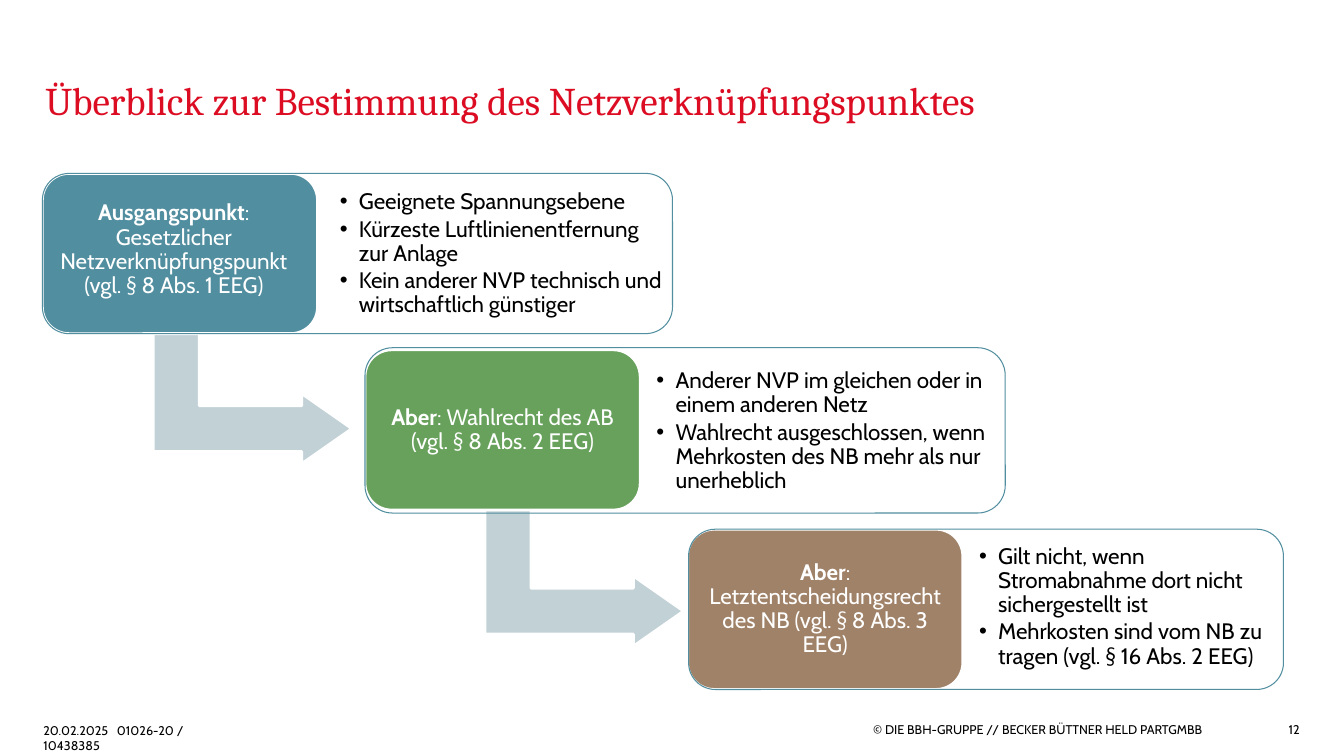
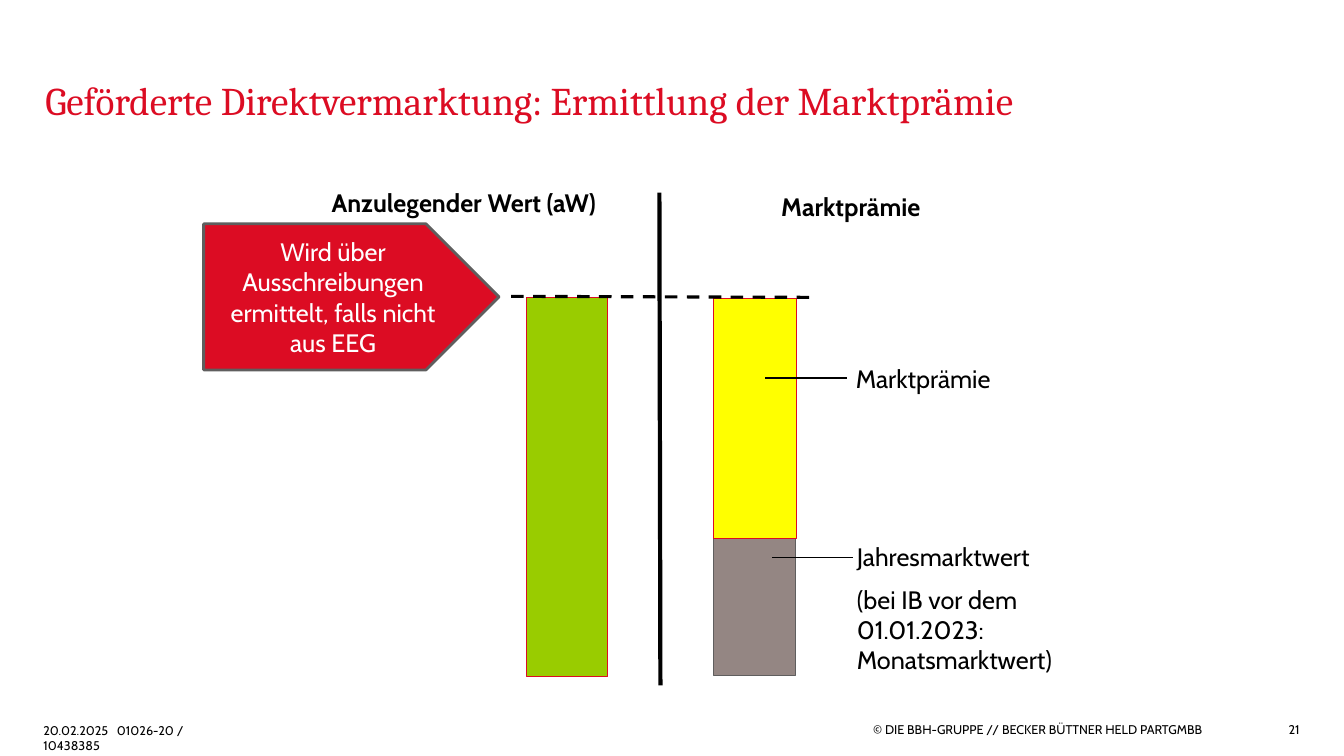
from lxml import etree
from pptx import Presentation
from pptx.dml.color import RGBColor
from pptx.enum.dml import MSO_LINE
from pptx.enum.shapes import MSO_CONNECTOR, MSO_SHAPE as Preset
from pptx.enum.text import MSO_ANCHOR as Anchor, PP_ALIGN as Align
from pptx.oxml.ns import qn
from pptx.util import Inches, Pt

COLORS = {
    "red": "DC0C23", "black": "000000", "white": "FFFFFF", "border": "5F5E5E",
    "teal": "518E9F", "green": "67A15C", "brown": "A08269", "arrow": "C2D1D6",
    "lime": "99CC00", "yellow": "FFFF00", "taupe": "948683",
}
DEFAULT_INSETS = (0.1, 0.05, 0.1, 0.05)
STEP_INSETS = (0.07, 0.07, 0.07, 0.07)


def color(name):
    return RGBColor.from_string(COLORS[name])


def write(frame, *paragraphs, size=18, font="Cabin", ink="black", bold=False,
          align=Align.LEFT, anchor=Anchor.TOP, insets=DEFAULT_INSETS,
          gap=0, spacing=None, bullet=None, tab=None):
    frame.word_wrap = True
    frame.vertical_anchor = anchor
    (frame.margin_left, frame.margin_top,
     frame.margin_right, frame.margin_bottom) = map(Inches, insets)
    for index, content in enumerate(paragraphs):
        paragraph = frame.add_paragraph() if index else frame.paragraphs[0]
        properties = paragraph._p.get_or_add_pPr()
        if bullet:
            properties.set("marL", str(Inches(0.19)))
            properties.set("indent", str(-Inches(0.19)))
            etree.SubElement(properties, qn("a:buFont"), typeface="Arial")
            etree.SubElement(properties, qn("a:buChar"), char=bullet)
        if tab:
            stops = etree.SubElement(properties, qn("a:tabLst"))
            etree.SubElement(stops, qn("a:tab"), pos=str(Inches(tab)), algn="l")
        paragraph.alignment = align
        if spacing:
            paragraph.line_spacing = spacing
        if index and gap:
            paragraph.space_before = Pt(gap)
        runs = [(content, bold)] if isinstance(content, str) else content
        for words, strong in runs:
            run = paragraph.add_run()
            run.text = words
            run.font.name, run.font.size, run.font.bold = font, Pt(size), strong
            run.font.color.rgb = color(ink)


class Deck:
    """Holds the shared style and the slide being built."""

    def __init__(self):
        self.presentation = Presentation()
        self.presentation.slide_width = Inches(13.33)
        self.presentation.slide_height = Inches(7.5)
        self.slide = None

    def new_slide(self, title, number):
        blank = self.presentation.slide_layouts[6]
        self.slide = self.presentation.slides.add_slide(blank)
        bare = (0, 0, 0, 0)
        self.text((0.45, 0.35, 11.38, 0.87), title, size=28, font="Cambria",
                  ink="red", anchor=Anchor.BOTTOM, insets=bare)
        self.text((0.43, 7.17, 1.72, 0.15), "20.02.2025\t01026-20 / 10438385",
                  size=9, insets=bare, tab=0.73)
        self.text((8.66, 7.08, 3.46, 0.31),
                  "© DIE BBH-GRUPPE // BECKER BÜTTNER HELD PARTGMBB",
                  size=9, anchor=Anchor.MIDDLE, insets=bare)
        self.text((12.42, 7.12, 0.47, 0.24), number, size=9, align=Align.RIGHT,
                  anchor=Anchor.MIDDLE, insets=bare)

    def text(self, box, *paragraphs, **style):
        holder = self.slide.shapes.add_textbox(*map(Inches, box))
        write(holder.text_frame, *paragraphs, **style)

    def shape(self, preset, box, fill=None, line="white", width=0.75):
        shape = self.slide.shapes.add_shape(preset, *map(Inches, box))
        shape.shadow.inherit = False
        if fill:
            shape.fill.solid()
            shape.fill.fore_color.rgb = color(fill)
        else:
            shape.fill.background()
        shape.line.color.rgb = color(line)
        shape.line.width = Pt(width)
        return shape

    def line(self, start, end, width=0.75, dash=None):
        line = self.slide.shapes.add_connector(
            MSO_CONNECTOR.STRAIGHT, *map(Inches, start + end))
        line.line.color.rgb = color("black")
        line.line.width = Pt(width)
        if dash:
            line.line.dash_style = dash
        etree.SubElement(line._element.spPr, qn("a:effectLst"))

    def bent_arrow(self, left, top):
        arrow = self.shape(Preset.BENT_UP_ARROW, (left, top, 1.39, 1.97),
                           "arrow", width=2)
        arrow.rotation = 90
        for index, value in enumerate((0.328, 0.25, 0.358)):
            arrow.adjustments[index] = value

    def step(self, frame, label_at, fill, heading, rest, points_box, points,
             insets=STEP_INSETS):
        label = self.shape(Preset.ROUNDED_RECTANGLE, label_at + (2.73, 1.59),
                           fill, width=2)
        write(label.text_frame, [(heading, True), (rest, False)], size=16,
              ink="white", align=Align.CENTER, anchor=Anchor.MIDDLE,
              insets=insets, spacing=0.9)
        self.text(points_box, *points, size=16, anchor=Anchor.MIDDLE,
                  insets=STEP_INSETS, spacing=0.9, gap=2.4, bullet="•")
        self.shape(Preset.ROUNDED_RECTANGLE, frame, line="teal")


def connection_point(deck):
    deck.new_slide("Überblick zur Bestimmung des Netzverknüpfungspunktes", "12")
    for corner in ((5.1, 4.73), (1.81, 2.92)):
        deck.bent_arrow(*corner)
    deck.step((0.42, 1.72, 6.25, 1.59), (0.42, 1.72), "teal", "Ausgangspunkt",
              ": Gesetzlicher Netzverknüpfungspunkt (vgl. § 8 Abs. 1 EEG)",
              (3.3, 1.81, 3.36, 1.42),
              ("Geeignete Spannungsebene",
               "Kürzeste Luftlinienentfernung zur Anlage",
               "Kein anderer NVP technisch und wirtschaftlich günstiger"),
              insets=(0.03, 0.07, 0.15, 0.14))
    deck.step((3.62, 3.45, 6.35, 1.64), (3.62, 3.47), "green", "Aber",
              ": Wahlrecht des AB (vgl. § 8 Abs. 2 EEG)",
              (6.44, 3.57, 3.61, 1.42),
              ("Anderer NVP im gleichen oder in einem anderen Netz",
               "Wahlrecht ausgeschlossen, wenn Mehrkosten des NB mehr als nur "
               "unerheblich"))
    deck.step((6.83, 5.25, 5.9, 1.59), (6.82, 5.25), "brown", "Aber",
              ": Letztentscheidungsrecht des NB (vgl. § 8 Abs. 3 EEG)",
              (9.64, 5.31, 3.2, 1.42),
              ("Gilt nicht, wenn Stromabnahme dort nicht sichergestellt ist",
               "Mehrkosten sind vom NB zu tragen (vgl. § 16 Abs. 2 EEG)"))


def market_premium(deck):
    deck.new_slide("Geförderte Direktvermarktung: Ermittlung der Marktprämie", "21")
    for box, fill, edge in (
            ((5.22, 2.95, 0.81, 3.76), "lime", "red"),
            ((7.08, 4.5, 0.81, 2.2), "taupe", "border"),
            ((7.08, 2.96, 0.82, 2.38), "yellow", "red")):
        deck.shape(Preset.RECTANGLE, box, fill, edge)
    deck.line((6.55, 6.8), (6.54, 1.91), 3)
    deck.line((7.66, 5.53), (8.46, 5.53))
    deck.line((7.59, 3.75), (8.4, 3.75))
    deck.line((5.07, 2.94), (8.06, 2.95), 2.25, MSO_LINE.DASH)
    deck.text((3.19, 1.81, 2.9, 0.4), "Anzulegender Wert (aW)", bold=True)
    deck.text((7.65, 1.85, 2.9, 0.4), "Marktprämie", bold=True)
    deck.text((8.39, 3.56, 2.9, 0.4), "Marktprämie")
    deck.text((8.4, 5.32, 2.9, 1.46), "Jahresmarktwert",
              "(bei IB vor dem 01.01.2023: Monatsmarktwert)", gap=9)
    tender = deck.shape(Preset.PENTAGON, (2.02, 2.22, 2.93, 1.45), "red",
                        "border", 2)
    write(tender.text_frame,
          "Wird über Ausschreibungen ermittelt, falls nicht aus EEG",
          ink="white", align=Align.CENTER, anchor=Anchor.MIDDLE)


def main():
    deck = Deck()
    connection_point(deck)
    market_premium(deck)
    deck.presentation.save("out.pptx")


if __name__ == "__main__":
    main()
